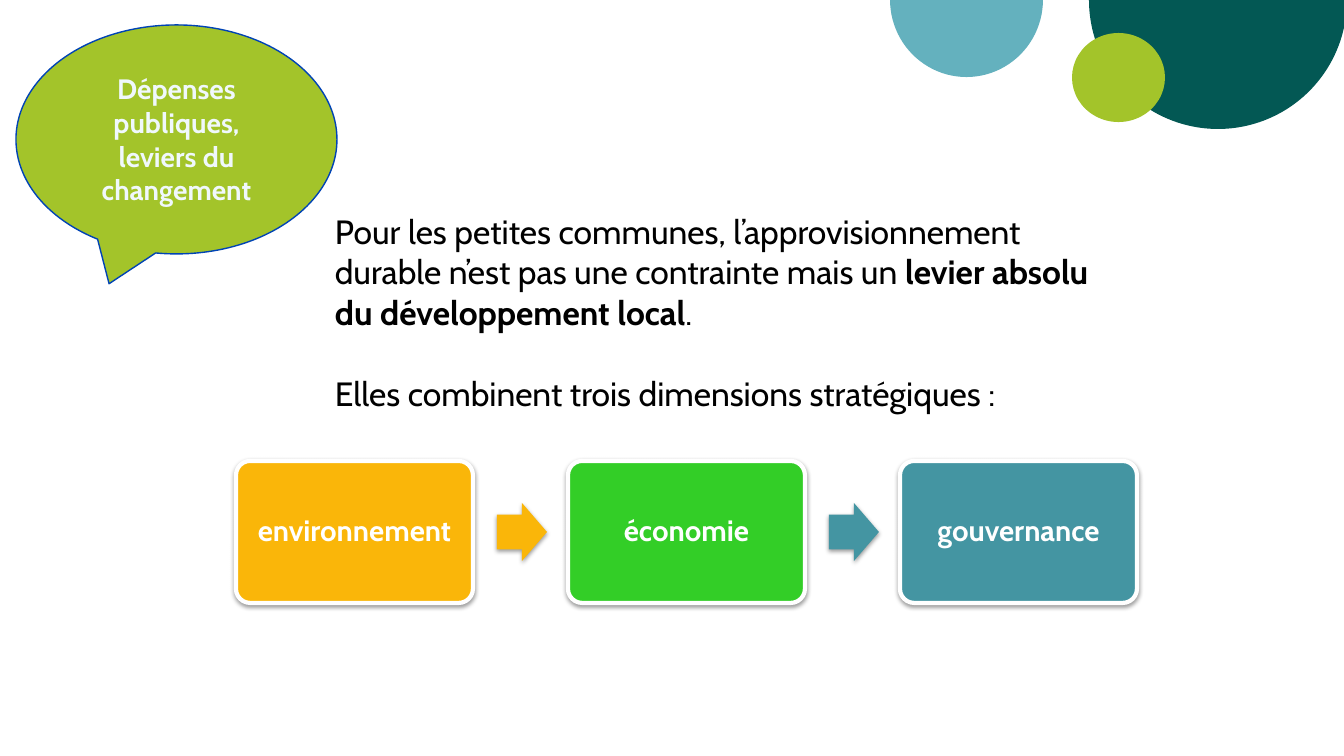
"""Build the slide on public spending as a lever for local development."""
from dataclasses import dataclass

from pptx import Presentation
from pptx.dml.color import RGBColor
from pptx.enum.shapes import MSO_SHAPE as SHAPE
from pptx.enum.text import MSO_ANCHOR as ANCHOR, MSO_AUTO_SIZE as FIT, PP_ALIGN as ALIGN
from pptx.oxml import parse_xml
from pptx.oxml.ns import nsdecls, qn
from pptx.util import Emu, Pt


@dataclass(frozen=True)
class Theme:
    font: str = "Cabin"
    title_size: int = 20
    body_size: int = 24
    card_size: int = 21
    dark: str = "035854"
    sky: str = "64B1BE"
    lime: str = "A3C42A"
    outline: str = "0043B5"
    pale: str = "F0F8FC"
    amber: str = "FAB609"
    green: str = "33CE27"
    teal: str = "4495A2"
    white: str = "FFFFFF"
    black: str = "000000"


T = Theme()
TITLE = "Dépenses publiques, leviers du changement"
BODY = [
    [("Pour les petites communes, l’approvisionnement durable n’est pas une contrainte mais un ", False),
     ("levier absolu du développement local", True),
     (".", False)],
    [("Elles combinent trois dimensions stratégiques :", False)],
]
CARDS = [("environnement", T.amber), ("économie", T.green), ("gouvernance", T.teal)]
ARROWS = [T.amber, T.teal]
CIRCLES = [
    (SHAPE.PIE, (1089, -129, 258, 258), T.dark, (0, 108)),
    (SHAPE.PIE, (890, -78, 153, 155), T.sky, (0, 108)),
    (SHAPE.OVAL, (1072, 33, 93, 89), T.lime, ()),
]
CALLOUT_BOX = (16, 25, 321, 229)
TITLE_BOX = (63, 58, 227, 162)
BODY_BOX = (325, 206, 784, 214)
CARD_X, CARD_Y, CARD_W, CARD_H = 236, 461, 237, 142
ARROW_W, ARROW_H, ARROW_OFFSET = 50, 58, 261
PITCH = 332
PARAGRAPH_GAP = 29

SHADOW_XML = (
    f'<a:outerShdw {nsdecls("a")} blurRad="40000" dist="20000" dir="5400000" rotWithShape="0">'
    '<a:srgbClr val="000000"><a:alpha val="38000"/></a:srgbClr></a:outerShdw>'
)


def px(n):
    return Emu(round(n * 914400 / 100.8))


def rgb(color):
    return RGBColor.from_string(color)


def style(font, size, color, bold):
    font.name, font.size, font.bold = T.font, Pt(size), bold
    font.color.rgb = rgb(color)


def add_shape(slide, kind, box, fill, adjust=(), line=None, width=1, shadow=False):
    sp = slide.shapes.add_shape(kind, *map(px, box))
    for i, value in enumerate(adjust):
        sp.adjustments[i] = value
    sp.fill.solid()
    sp.fill.fore_color.rgb = rgb(fill)
    if line:
        sp.line.color.rgb = rgb(line)
        sp.line.width = Pt(width)
    else:
        sp.line.fill.background()
    sp.shadow.inherit = False
    if shadow:
        sp._element.spPr.find(qn("a:effectLst")).append(parse_xml(SHADOW_XML))
    return sp


def center_text(sp, text, size, color):
    tf = sp.text_frame
    tf.text = text
    tf.word_wrap, tf.auto_size, tf.vertical_anchor = True, FIT.NONE, ANCHOR.MIDDLE
    p = tf.paragraphs[0]
    p.alignment = ALIGN.CENTER
    style(p.runs[0].font, size, color, True)
    return p


def add_title(slide):
    add_shape(slide, SHAPE.OVAL_CALLOUT, CALLOUT_BOX, T.lime, (-0.21, 0.63), T.outline)
    sp = slide.shapes.title
    sp.left, sp.top, sp.width, sp.height = map(px, TITLE_BOX)
    center_text(sp, TITLE, T.title_size, T.pale)
    slide.shapes._spTree.append(sp._element)


def add_body(slide):
    tf = slide.shapes.add_textbox(*map(px, BODY_BOX)).text_frame
    tf.word_wrap = True
    for i, runs in enumerate(BODY):
        p = tf.add_paragraph() if i else tf.paragraphs[0]
        if i:
            p.space_before = Pt(PARAGRAPH_GAP)
        for text, bold in runs:
            r = p.add_run()
            r.text = text
            style(r.font, T.body_size, T.black, bold)


def add_flow(slide):
    for i, (label, fill) in enumerate(CARDS):
        box = (CARD_X + i * PITCH, CARD_Y, CARD_W, CARD_H)
        sp = add_shape(slide, SHAPE.ROUNDED_RECTANGLE, box, fill, (0.1,), T.white, 3, shadow=True)
        center_text(sp, label, T.card_size, T.white).line_spacing = 0.9
    arrow_y = CARD_Y + (CARD_H - ARROW_H) // 2
    for i, fill in enumerate(ARROWS):
        box = (CARD_X + ARROW_OFFSET + i * PITCH, arrow_y, ARROW_W, ARROW_H)
        add_shape(slide, SHAPE.RIGHT_ARROW, box, fill, (0.6, 0.5), shadow=True)


def main():
    prs = Presentation()
    prs.slide_width, prs.slide_height = px(1344), px(756)
    slide = prs.slides.add_slide(prs.slide_layouts[5])
    for kind, box, fill, adjust in CIRCLES:
        add_shape(slide, kind, box, fill, adjust)
    add_title(slide)
    add_body(slide)
    add_flow(slide)
    prs.save("out.pptx")


if __name__ == "__main__":
    main()
